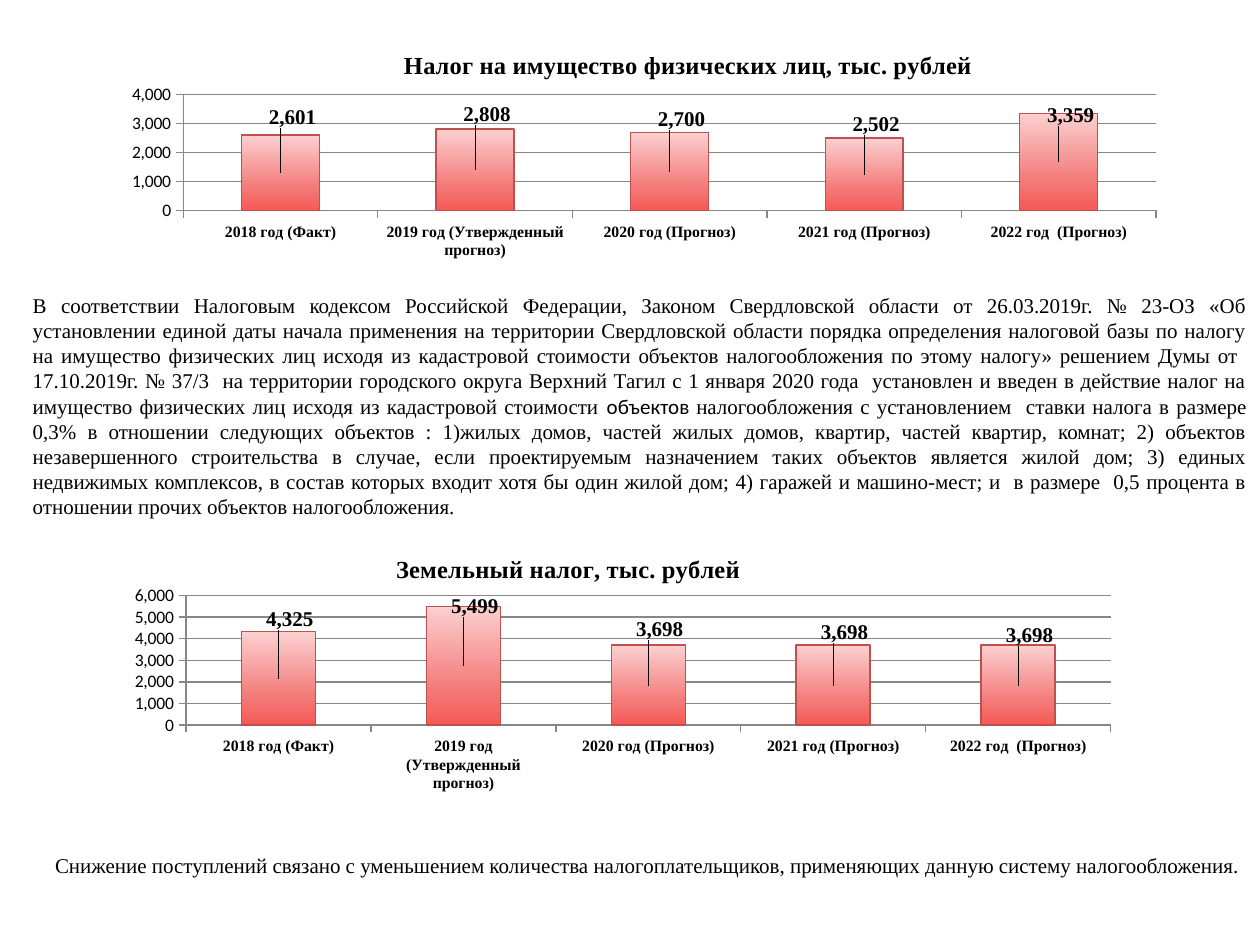
"""Build the slide on property tax and land tax revenue."""
import copy
import dataclasses

import pptx
import pptx.chart.data
import pptx.dml.color
import pptx.enum.chart
import pptx.enum.text
import pptx.oxml
import pptx.oxml.ns
import pptx.util

Cm = pptx.util.Cm
Pt = pptx.util.Pt
RGBColor = pptx.dml.color.RGBColor


@dataclasses.dataclass(frozen=True)
class Theme:
    """Hold the fonts, type sizes and colours."""
    serif: str = "Times New Roman"
    sans: str = "Calibri"
    text: str = "000000"
    grid: str = "878787"
    bar_line: str = "C0504D"
    bar_stops: tuple = ((0, "FBD0D0"), (0.72, "F37876"), (1, "F55956"))
    title_size: float = 14
    body_size: float = 12
    value_size: float = 10
    category_size: float = 9
    number_format: str = "#,##0"


class SlideBuilder:
    """Place charts and text on one slide in one style."""

    def __init__(self, slide, theme):
        self.slide = slide
        self.theme = theme

    def format_font(self, font, size, name, bold=False):
        font.size = Pt(size)
        font.name = name
        font.bold = bold
        font.color.rgb = RGBColor.from_string(self.theme.text)

    def format_line(self, line, color):
        line.color.rgb = RGBColor.from_string(color)
        line.width = Pt(0.79)

    def set_layout(self, parent, index, **settings):
        for old_layout in parent.findall(pptx.oxml.ns.qn("c:layout")):
            parent.remove(old_layout)
        items = "".join(f'<c:{key} val="{value}"/>' for key, value in settings.items())
        parent.insert(index, pptx.oxml.parse_xml(
            f'<c:layout {pptx.oxml.ns.nsdecls("c")}>'
            f"<c:manualLayout>{items}</c:manualLayout></c:layout>"))

    def add_text(self, box, runs, alignment, wrap):
        shape = self.slide.shapes.add_textbox(*map(Cm, box))
        frame = shape.text_frame
        frame.word_wrap = wrap
        frame.auto_size = pptx.enum.text.MSO_AUTO_SIZE.SHAPE_TO_FIT_TEXT
        paragraph = frame.paragraphs[0]
        paragraph.alignment = alignment
        for text, name in runs:
            run = paragraph.add_run()
            run.text = text
            self.format_font(run.font, self.theme.body_size, name)

    def add_column_chart(self, box, title, categories, values, maximum, plot_box, label_rises):
        data = pptx.chart.data.CategoryChartData(number_format=self.theme.number_format)
        data.categories = categories
        data.add_series("Series 1", values)
        chart = self.slide.shapes.add_chart(
            pptx.enum.chart.XL_CHART_TYPE.COLUMN_STACKED, *map(Cm, box), data).chart
        chart.has_legend = False
        self.format_font(chart.font, 18, self.theme.sans)
        self.format_title(chart, title)
        self.format_axes(chart, maximum)
        left, top, width, height = plot_box
        plot_area = chart.element.find(".//" + pptx.oxml.ns.qn("c:plotArea"))
        self.set_layout(plot_area, 0, layoutTarget="inner", xMode="edge", yMode="edge",
                        x=left, y=top, w=width, h=height)
        plot = chart.plots[0]
        plot.vary_by_categories = False
        plot.gap_width = 150
        plot.overlap = 100
        self.format_bars(plot.series[0])
        self.format_labels(plot.series[0], label_rises)

    def format_title(self, chart, title):
        chart.has_title = True
        run = chart.chart_title.text_frame.paragraphs[0].add_run()
        run.text = title
        self.format_font(run.font, self.theme.title_size, self.theme.serif, True)
        title_element = chart.element.find(".//" + pptx.oxml.ns.qn("c:title"))
        self.set_layout(title_element, 1, xMode="edge", yMode="edge", x=0.3, y=0.09)

    def format_axes(self, chart, maximum):
        theme = self.theme
        category_axis, value_axis = chart.category_axis, chart.value_axis
        self.format_font(category_axis.tick_labels.font, theme.category_size, theme.serif, True)
        self.format_font(value_axis.tick_labels.font, theme.value_size, theme.sans)
        value_axis.tick_labels.number_format = theme.number_format
        value_axis.tick_labels.number_format_is_linked = False
        value_axis.minimum_scale = 0
        value_axis.maximum_scale = maximum
        value_axis.major_unit = 1000
        value_axis.has_major_gridlines = True
        for part in (category_axis, value_axis, value_axis.major_gridlines):
            self.format_line(part.format.line, theme.grid)

    def format_bars(self, series):
        series.invert_if_negative = False
        fill = series.format.fill
        fill.gradient()
        fill.gradient_angle = 270
        stop_list = series.format.element.find(".//" + pptx.oxml.ns.qn("a:gsLst")) \
            if hasattr(series.format, "element") else \
            series._element.find(".//" + pptx.oxml.ns.qn("a:gsLst"))
        stop_list.append(copy.deepcopy(stop_list[-1]))
        for stop, (position, color) in zip(fill.gradient_stops, self.theme.bar_stops):
            stop.position = position
            stop.color.rgb = RGBColor.from_string(color)
        self.format_line(series.format.line, self.theme.bar_line)

    def format_labels(self, series, label_rises):
        theme = self.theme
        labels = series.data_labels
        labels.show_value = True
        labels.number_format = theme.number_format
        labels.number_format_is_linked = False
        self.format_font(labels.font, theme.body_size, theme.serif, True)
        for index in range(len(label_rises)):
            label = series.points[index].data_label
            self.format_font(label.font, theme.body_size, theme.serif, True)
            label.position = pptx.enum.chart.XL_LABEL_POSITION.CENTER
        label_elements = series._element.findall(".//" + pptx.oxml.ns.qn("c:dLbl"))
        for element, rise in zip(label_elements, label_rises):
            self.set_layout(element, 1, x=0.01, y=-rise)


def main():
    presentation = pptx.Presentation()
    presentation.slide_width = Cm(25.4)
    presentation.slide_height = Cm(19.05)
    theme = Theme()
    builder = SlideBuilder(presentation.slides.add_slide(presentation.slide_layouts[6]), theme)

    years = ["2018 год (Факт)", "2019 год (Утвержденный прогноз)", "2020 год (Прогноз)",
             "2021 год (Прогноз)", "2022 год  (Прогноз)"]
    label_rises = (0.2, 0.2, 0.19, 0.18, 0.17)
    charts = [
        ((0.79, 0.41, 24.21, 5.56), "Налог на имущество физических лиц, тыс. рублей",
         (2601, 2808, 2700, 2502, 3359), 4000, (0.12, 0.27, 0.81, 0.42)),
        ((0.99, 10.52, 23.01, 5.94), "Земельный налог, тыс. рублей",
         (4325, 5499, 3698, 3698, 3698), 6000, (0.12, 0.25, 0.81, 0.44)),
    ]
    for box, title, values, maximum, plot_box in charts:
        builder.add_column_chart(box, title, years, values, maximum, plot_box, label_rises)

    law_runs = [
        ("В соответствии Налоговым кодексом Российской Федерации, Законом Свердловской области "
         "от 26.03.2019г. № 23-ОЗ «Об установлении единой даты начала применения на территории "
         "Свердловской области порядка определения налоговой базы по налогу на имущество "
         "физических лиц исходя из кадастровой стоимости объектов налогообложения по этому "
         "налогу» решением Думы от  17.10.2019г. № 37/3  на территории городского округа "
         "Верхний Тагил с 1 января 2020 года  установлен и введен в действие налог на имущество "
         "физических лиц исходя из кадастровой стоимости ", theme.serif),
        ("объектов ", theme.sans),
        ("налогообложения с установлением  ставки налога в размере 0,3% в отношении следующих "
         "объектов : 1)жилых домов, частей жилых домов, квартир, частей квартир, комнат; "
         "2) объектов незавершенного строительства в случае, если проектируемым назначением "
         "таких объектов является жилой дом; 3) единых недвижимых комплексов, в состав которых "
         "входит хотя бы один жилой дом; 4) гаражей и машино-мест; и  в размере  0,5 процента "
         "в отношении прочих объектов налогообложения.", theme.serif),
    ]
    builder.add_text((0.41, 5.77, 24.99, 6.4), law_runs, pptx.enum.text.PP_ALIGN.JUSTIFY, True)
    decline_runs = [("Снижение поступлений связано с уменьшением количества налогоплательщиков, "
                     "применяющих данную систему налогообложения.", theme.serif)]
    builder.add_text((0.86, 17.07, 24.54, 0.76), decline_runs, pptx.enum.text.PP_ALIGN.LEFT, False)
    presentation.save("out.pptx")


if __name__ == "__main__":
    main()
